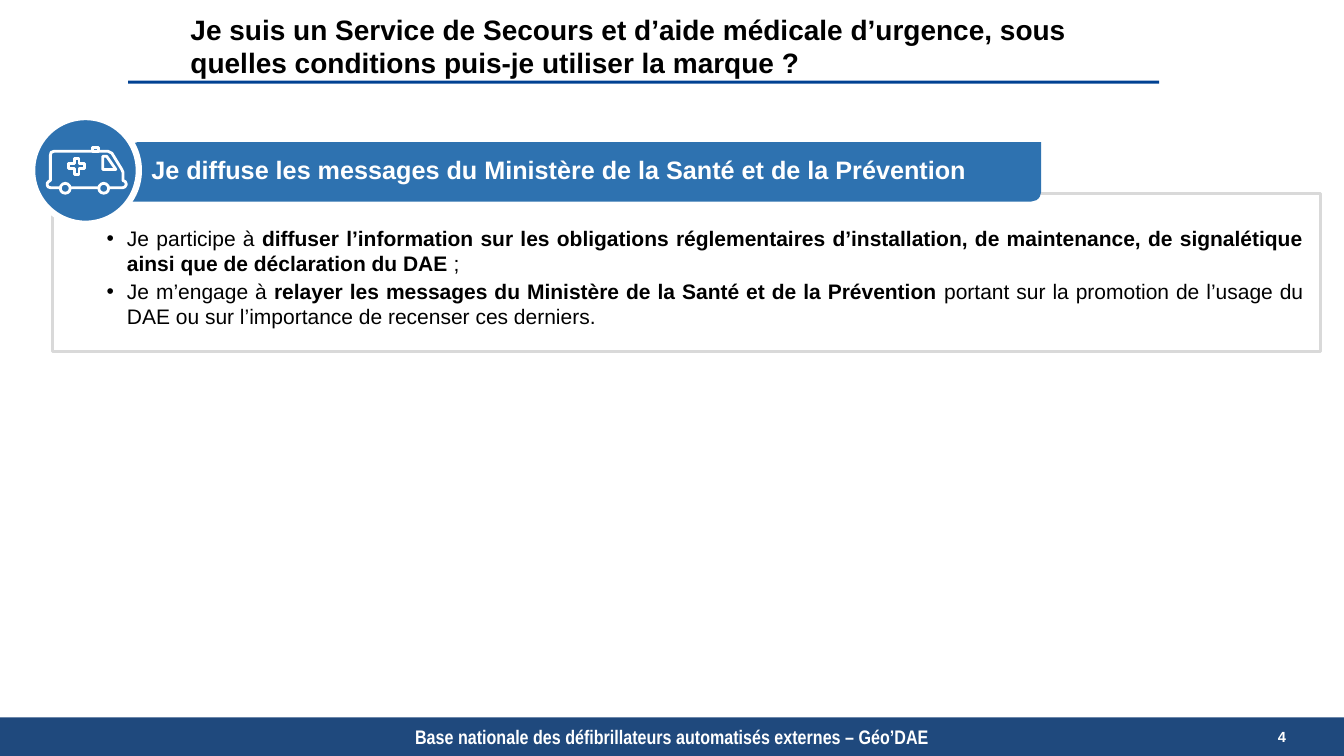
from lxml import etree
from pptx import Presentation
from pptx import util as u
from pptx.dml.color import RGBColor
from pptx.enum import shapes, text
from pptx.oxml.ns import qn

COLORS = {
    "navy": "1F497D", "rule": "004192", "blue": "2E72B0",
    "grey": "D9D9D9", "white": "FFFFFF", "black": "000000",
}
SHAPE = shapes.MSO_SHAPE
ALIGN = text.PP_ALIGN
HINT = u.Cm(0.51)  # indent shared by the banner and the bullets


def rgb(name):
    return RGBColor.from_string(COLORS[name])


def add_run(p, content, size=15, color="black", bold=False, font="Arial"):
    r = p.add_run()
    r.text = content
    r.font.size, r.font.bold, r.font.name = u.Pt(size), bold, font
    r.font.color.rgb = rgb(color)


class Deck:
    """Holds the style and the current slide; positions are in centimetres."""

    def __init__(self, prs):
        self.s = prs.slides.add_slide(prs.slide_layouts[6])

    def paint(self, sp, fill=None, line=None, width=1):
        sp.shadow.inherit = False
        if fill:
            sp.fill.solid()
            sp.fill.fore_color.rgb = rgb(fill)
        else:
            sp.fill.background()
        if line:
            sp.line.color.rgb = rgb(line)
            sp.line.width = u.Pt(width)
        else:
            sp.line.fill.background()
        return sp

    def shape(self, kind, box, **style):
        sp = self.s.shapes.add_shape(kind, *map(u.Cm, box))
        return self.paint(sp, **style)

    def outline(self, points, **style):
        """Closed polygon; points are in hundredths of a centimetre."""
        fb = self.s.shapes.build_freeform(*points[0], scale=u.Cm(0.01))
        fb.add_line_segments(points[1:], close=True)
        return self.paint(fb.convert_to_shape(), **style)

    def frame(self, sp, wrap=True, margins=None, anchor=text.MSO_ANCHOR.MIDDLE):
        tf = sp.text_frame
        tf.word_wrap, tf.vertical_anchor = wrap, anchor
        if margins:
            (tf.margin_left, tf.margin_top,
             tf.margin_right, tf.margin_bottom) = map(u.Cm, margins)
        return tf

    def label(self, box, content, align=ALIGN.LEFT, margins=None, **fmt):
        sp = self.s.shapes.add_textbox(*map(u.Cm, box))
        p = self.frame(sp, margins=margins).paragraphs[0]
        p.alignment = align
        add_run(p, content, bold=True, **fmt)

    def banner(self, box, content):
        sp = self.shape(SHAPE.ROUND_2_DIAG_RECTANGLE, box, fill="blue")
        tf = self.frame(sp, wrap=False, margins=(0, 0, 0, 0.1))
        p = tf.paragraphs[0]
        p.alignment = ALIGN.LEFT
        p._p.get_or_add_pPr().set("marL", str(HINT))
        add_run(p, content, size=18, color="white", bold=True)

    def bullets(self, box, items):
        """Each item is a list of (text, bold) pairs."""
        sp = self.s.shapes.add_textbox(*map(u.Cm, box))
        tf = self.frame(sp, anchor=text.MSO_ANCHOR.TOP)
        for i, item in enumerate(items):
            p = tf.add_paragraph() if i else tf.paragraphs[0]
            p.alignment = ALIGN.JUSTIFY
            p.space_before, p.space_after = u.Pt(1 if i else 0), u.Pt(1)
            pPr = p._p.get_or_add_pPr()
            pPr.set("marL", str(HINT))
            pPr.set("indent", str(-HINT))
            etree.SubElement(pPr, qn("a:buFont")).set("typeface", "Arial")
            etree.SubElement(pPr, qn("a:buChar")).set("char", "•")
            for content, bold in item:
                add_run(p, content, bold=bold)

    def ambulance(self):
        stroke = dict(line="white", width=2)
        body = [
            (127, 455), (127, 391), (129, 384), (137, 381), (272, 381),
            (282, 386), (307, 427), (310, 434), (310, 455), (316, 458),
            (318, 463), (318, 466), (315, 471), (310, 473), (127, 473),
            (121, 471), (119, 466), (119, 462), (122, 458),
        ]
        window = [(259, 394), (269, 394), (292, 427), (259, 427)]
        for points in (body, window):
            self.outline(points, **stroke)
        self.shape(SHAPE.RECTANGLE, (2.34, 3.71, 0.15, 0.1), **stroke)
        cross = self.shape(SHAPE.CROSS, (1.73, 3.99, 0.4, 0.4), **stroke)
        cross.adjustments[0] = 0.35
        for x in (1.52, 2.49):
            self.shape(SHAPE.OVAL, (x, 4.62, 0.25, 0.25), fill="blue", **stroke)


def main():
    prs = Presentation()
    prs.slide_width, prs.slide_height = u.Cm(33.87), u.Cm(19.05)
    deck = Deck(prs)

    deck.shape(SHAPE.RECTANGLE, (0, 18.08, 33.87, 0.97), fill="navy")
    deck.label((7.44, 18.29, 19, 0.56),
               "Base nationale des défibrillateurs automatisés externes – Géo’DAE",
               align=ALIGN.CENTER, size=14, color="white", font="Arial Narrow")
    deck.shape(SHAPE.RECTANGLE, (3.23, 2.03, 25.98, 0.08), fill="rule")
    deck.label((4.55, 0.56, 24.21, 1.19),
               "Je suis un Service de Secours et d’aide médicale d’urgence, sous "
               "quelles conditions puis-je utiliser la marque ?", size=20)
    deck.label((27.41, 18.11, 5, 0.89), "4", align=ALIGN.RIGHT,
               margins=(0, 0, 0, 0), size=10.5, color="white")

    deck.shape(SHAPE.RECTANGLE, (1.32, 4.88, 31.95, 3.99),
               fill="white", line="grey", width=2.25)
    deck.banner((3.23, 3.58, 23.01, 1.5),
                "Je diffuse les messages du Ministère de la Santé et de la Prévention")
    deck.shape(SHAPE.OVAL, (0.81, 2.95, 2.69, 2.69),
               fill="blue", line="white", width=4.5)
    deck.ambulance()
    deck.bullets((2.44, 5.56, 30.66, 2.9), [
        [("Je participe à ", False),
         ("diffuser l’information sur les obligations réglementaires "
          "d’installation, de maintenance, de signalétique ainsi que de "
          "déclaration du DAE ", True),
         (";", False)],
        [("Je m’engage à ", False),
         ("relayer les messages du Ministère de la Santé et de la Prévention", True),
         (" portant sur la promotion de l’usage du DAE ou sur l’importance "
          "de recenser ces derniers.", False)],
    ])
    prs.save("out.pptx")


if __name__ == "__main__":
    main()
